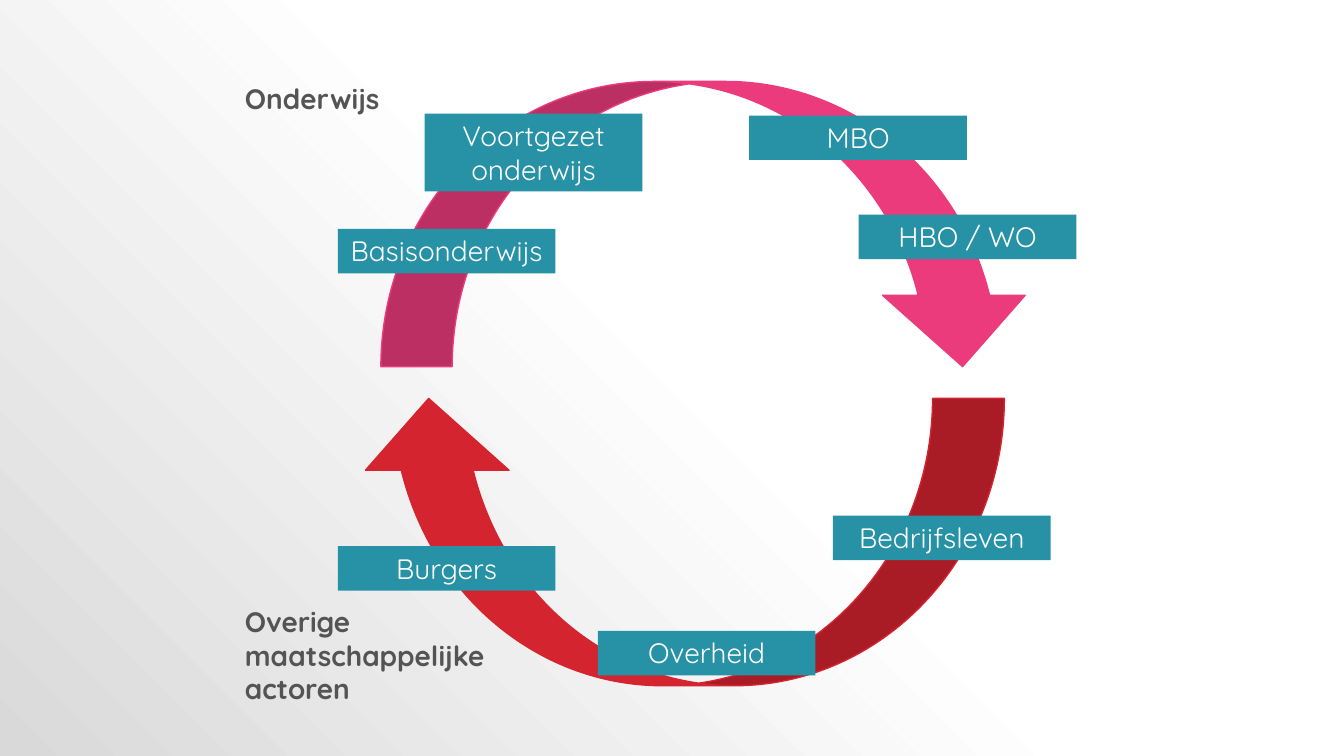
import pptx
import pptx.util
import pptx.dml.color
import pptx.enum.shapes
import pptx.enum.text
import pptx.oxml
import pptx.oxml.ns

Pt = pptx.util.Pt
SHAPE = pptx.enum.shapes.MSO_SHAPE
ALIGN = pptx.enum.text.PP_ALIGN

FONT = "Quicksand"
TEAL = "2791A6"
WHITE = "FFFFFF"
GREY = "545454"
PINK = "EB3B7C"
RED = "D4242F"

LABEL_WIDTH = 155.5
LINE_HEIGHT = 31.7
DOUBLE_HEIGHT = 55.7

LABELS = [
    ("Basisonderwijs", 241.3, 163.6, LINE_HEIGHT),
    ("Voortgezet onderwijs", 303.4, 81.1, DOUBLE_HEIGHT),
    ("MBO", 535.2, 82.6, LINE_HEIGHT),
    ("HBO / WO", 613.4, 153.4, LINE_HEIGHT),
    ("Bedrijfsleven", 595, 368.4, LINE_HEIGHT),
    ("Overheid", 427, 450.7, LINE_HEIGHT),
    ("Burgers", 241.3, 390.2, LINE_HEIGHT),
]

HEADINGS = [
    ("Onderwijs", 54.7, 170, LINE_HEIGHT),
    ("Overige maatschappelijke actoren", 428.4, 213, 80),
]
HEADING_LEFT = 167.8


def rgb(color):
    return pptx.dml.color.RGBColor.from_string(color)


def paint_background(slide):
    slide.background.fill.solid()
    properties = slide.element.xpath(".//p:bgPr")[0]
    stops = [(0, WHITE), (28, WHITE), (48, WHITE), (100, "D9D9D9")]
    stop_xml = "".join(
        f'<a:gs pos="{position * 1000}"><a:srgbClr val="{color}"/></a:gs>'
        for position, color in stops
    )
    gradient = pptx.oxml.parse_xml(
        f'<a:gradFill {pptx.oxml.ns.nsdecls("a")} rotWithShape="1">'
        f"<a:gsLst>{stop_xml}</a:gsLst>"
        '<a:path path="circle"><a:fillToRect l="100000" b="100000"/></a:path>'
        "</a:gradFill>"
    )
    properties.replace(properties[0], gradient)


def write(shape, text, color, align, bold):
    frame = shape.text_frame
    frame.word_wrap = True
    frame.auto_size = pptx.enum.text.MSO_AUTO_SIZE.SHAPE_TO_FIT_TEXT
    frame.vertical_anchor = pptx.enum.text.MSO_ANCHOR.TOP
    paragraph = frame.paragraphs[0]
    paragraph.text = text
    paragraph.alignment = align
    paragraph.font.name = FONT
    paragraph.font.size = Pt(20)
    paragraph.font.bold = bold
    paragraph.font.color.rgb = rgb(color)


def add_cycle_arrow(shapes, left, top, width, height, color, rotation):
    arrow = shapes.add_shape(
        SHAPE.CURVED_DOWN_ARROW, Pt(left), Pt(top), Pt(width), Pt(height)
    )
    arrow.rotation = rotation
    arrow.shadow.inherit = False
    arrow.fill.solid()
    arrow.fill.fore_color.rgb = rgb(color)
    arrow.line.color.rgb = rgb(color)
    arrow.line.width = Pt(1)


def add_label(shapes, text, left, top, height):
    label = shapes.add_shape(
        SHAPE.RECTANGLE, Pt(left), Pt(top), Pt(LABEL_WIDTH), Pt(height)
    )
    label.shadow.inherit = False
    label.fill.solid()
    label.fill.fore_color.rgb = rgb(TEAL)
    label.line.fill.background()
    write(label, text, WHITE, ALIGN.CENTER, False)


def add_heading(shapes, text, top, width, height):
    heading = shapes.add_textbox(Pt(HEADING_LEFT), Pt(top), Pt(width), Pt(height))
    write(heading, text, GREY, ALIGN.LEFT, True)


def main():
    presentation = pptx.Presentation()
    presentation.slide_width = Pt(960)
    presentation.slide_height = Pt(540)
    slide = presentation.slides.add_slide(presentation.slide_layouts[6])
    paint_background(slide)

    cycle = slide.shapes.add_group_shape().shapes
    add_cycle_arrow(cycle, 272.1, 58.2, 466.4, 203.7, PINK, 0)
    add_cycle_arrow(cycle, 254.9, 284.6, 462.5, 205.2, RED, 180)
    for label in LABELS:
        add_label(cycle, *label)
    for heading in HEADINGS:
        add_heading(cycle, *heading)

    presentation.save("out.pptx")


if __name__ == "__main__":
    main()
